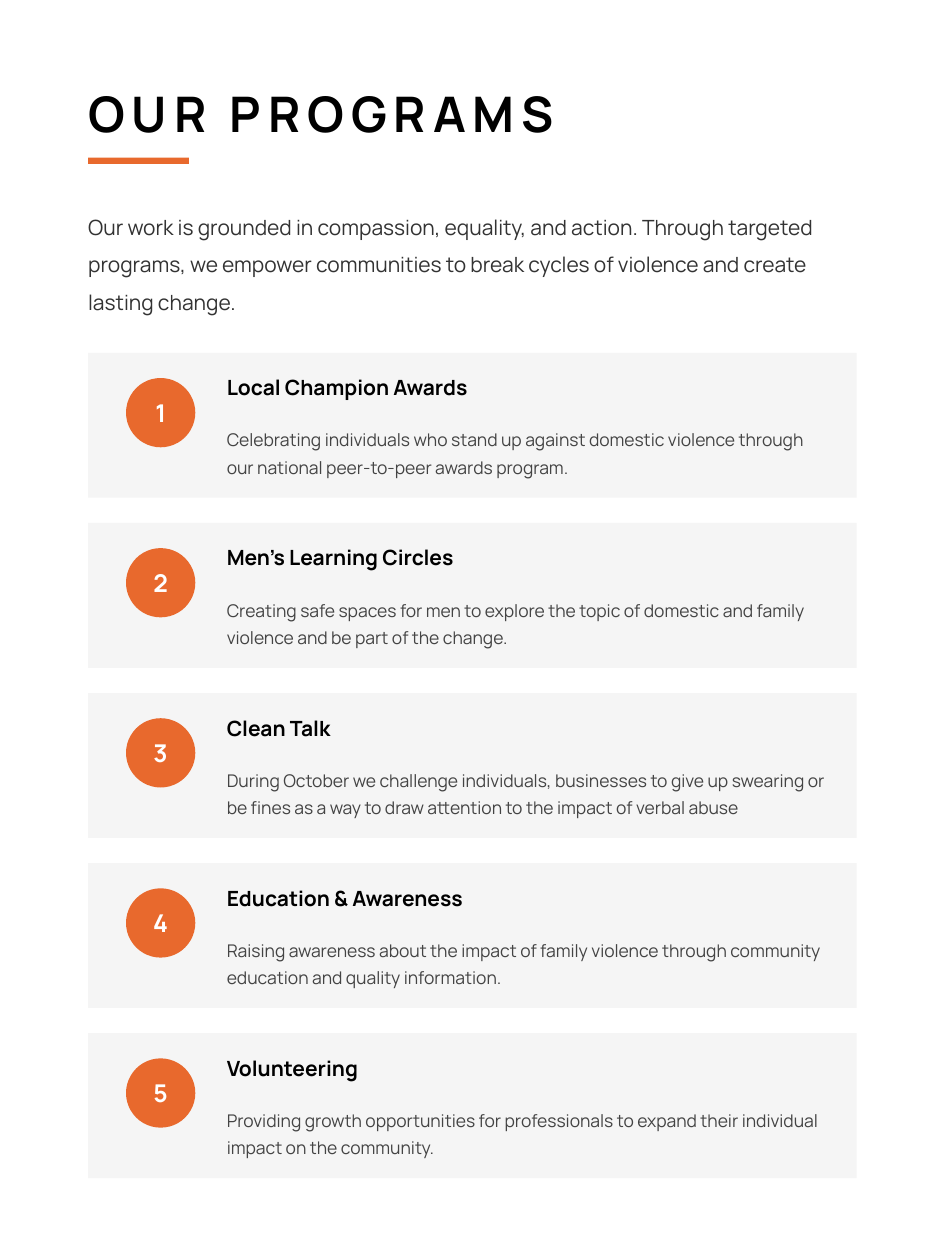
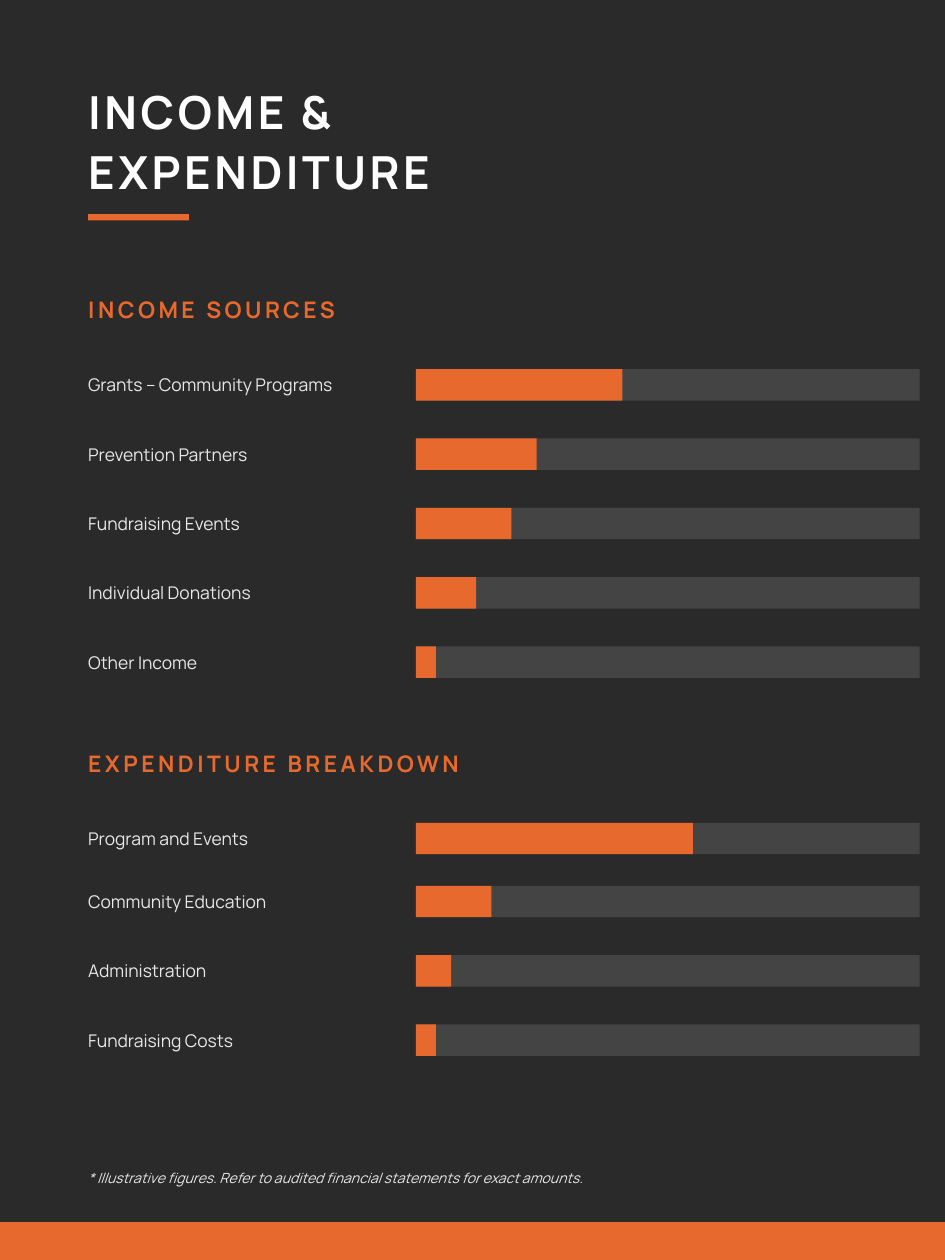
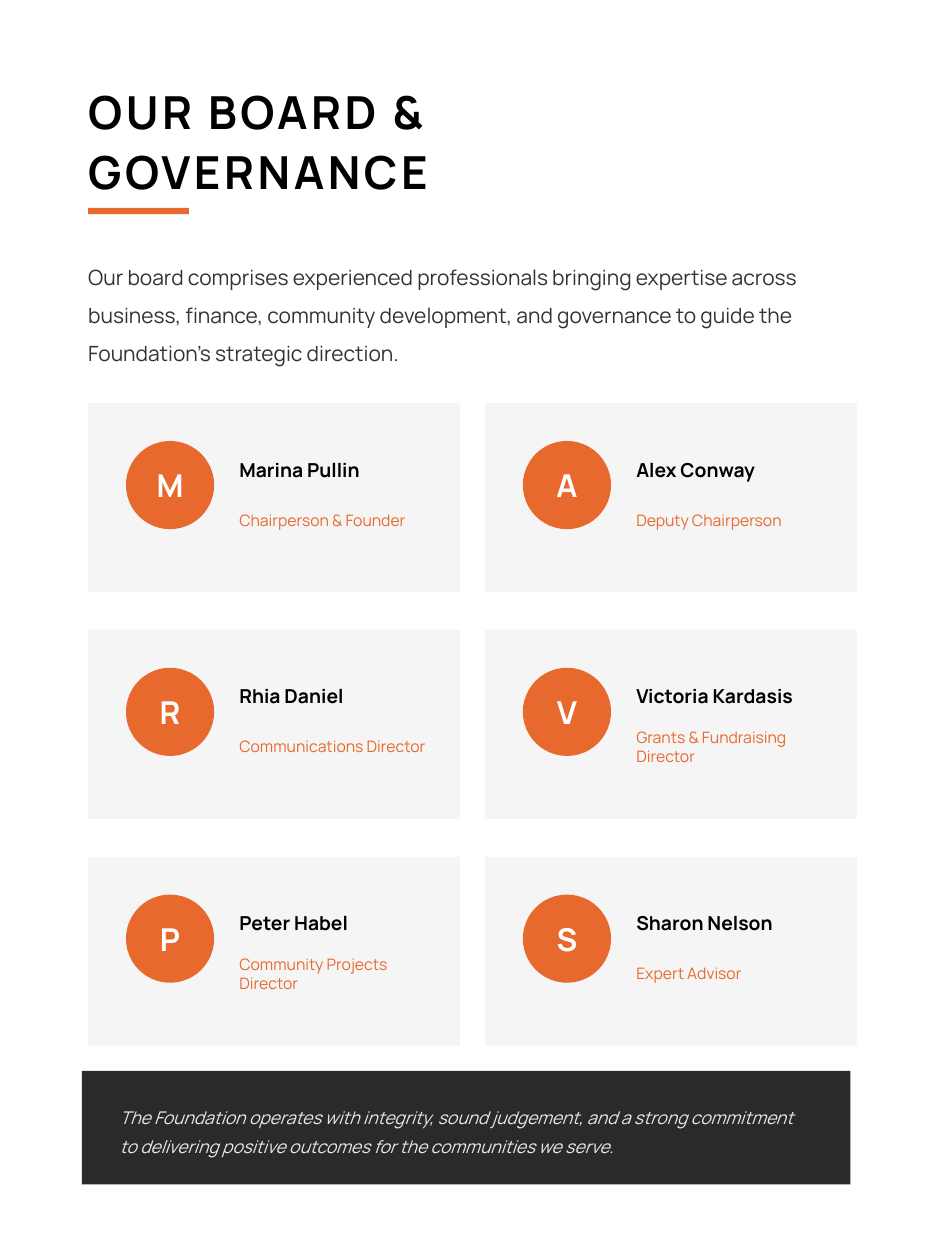
"""Build three report pages: programs, income and expenditure, board."""
from pptx import Presentation
from pptx.dml.color import RGBColor
from pptx.enum.shapes import MSO_SHAPE as Shape
from pptx.enum.text import MSO_ANCHOR as Anchor, MSO_AUTO_SIZE as AutoSize, PP_ALIGN as Align
from pptx.util import Inches, Pt

FONT = "Manrope"
LEFT = 0.7
CONTENT_WIDTH = 6.1
COLORS = {
    "orange": "E8692D", "dark": "2A2A2A", "white": "FFFFFF", "black": "000000",
    "card": "F5F5F5", "track": "444444", "intro": "333333", "body": "444444",
    "pale": "E8E8E8",
}
STYLES = {
    "wide_title": {"size": 28, "bold": True, "spacing": 4},
    "title": {"size": 26, "bold": True, "spacing": 2, "lines": 1.1},
    "intro": {"size": 12, "color": "intro", "lines": 1.5},
    "number": {"size": 14, "color": "white", "bold": True, "align": Align.CENTER},
    "program": {"size": 12, "color": "black", "bold": True},
    "detail": {"size": 10, "color": "body", "lines": 1.3},
    "section": {"size": 13, "color": "orange", "bold": True, "spacing": 2},
    "label": {"size": 10, "color": "pale"},
    "footnote": {"size": 8, "color": "pale", "italic": True},
    "initial": {"size": 18, "color": "white", "bold": True, "align": Align.CENTER},
    "member": {"size": 11, "color": "black", "bold": True},
    "role": {"size": 9, "color": "orange"},
    "statement": {"size": 10, "color": "pale", "italic": True, "lines": 1.4},
}
PROGRAMS = [
    ("Local Champion Awards", 4.8,
     "Celebrating individuals who stand up against domestic violence through "
     "our national peer-to-peer awards program."),
    ("Men’s Learning Circles", 4.8,
     "Creating safe spaces for men to explore the topic of domestic and family "
     "violence and be part of the change."),
    ("Clean Talk", 4.9,
     "During October we challenge individuals, businesses to give up swearing or "
     "be fines as a way to draw attention to the impact of verbal abuse"),
    ("Education & Awareness", 4.8,
     "Raising awareness about the impact of family violence through community "
     "education and quality information."),
    ("Volunteering", 4.8,
     "Providing growth opportunities for professionals to expand their individual "
     "impact on the community."),
]
INCOME = [
    ("Grants – Community Programs", 0.41),
    ("Prevention Partners", 0.24),
    ("Fundraising Events", 0.19),
    ("Individual Donations", 0.12),
    ("Other Income", 0.04),
]
EXPENDITURE = [
    ("Program and Events", 0.55),
    ("Community Education", 0.15),
    ("Administration", 0.07),
    ("Fundraising Costs", 0.04),
]
BOARD = [
    ("Marina Pullin", "Chairperson & Founder"),
    ("Alex Conway", "Deputy Chairperson"),
    ("Rhia Daniel", "Communications Director"),
    ("Victoria Kardasis", "Grants & Fundraising Director"),
    ("Peter Habel", "Community Projects Director"),
    ("Sharon Nelson", "Expert Advisor"),
]


def rgb(name):
    return RGBColor.from_string(COLORS[name])


def write(box, text, style, color=None):
    look = STYLES[style]
    frame = box.text_frame
    frame_values = {
        "margin_left": 0, "margin_top": 0, "margin_right": 0, "margin_bottom": 0,
        "word_wrap": True, "auto_size": AutoSize.NONE, "vertical_anchor": Anchor.MIDDLE,
    }
    for name, value in frame_values.items():
        setattr(frame, name, value)
    frame.text = text
    font_values = {
        "name": FONT, "size": Pt(look["size"]),
        "bold": look.get("bold", False), "italic": look.get("italic", False),
    }
    for para in frame.paragraphs:
        para.alignment = look.get("align", Align.LEFT)
        para.line_spacing = look.get("lines", 1.0)
        for span in para.runs:
            for name, value in font_values.items():
                setattr(span.font, name, value)
            span.font.color.rgb = rgb(color or look["color"])
            if "spacing" in look:
                span.font._element.set("spc", str(look["spacing"] * 100))


def add_text(page, left, top, width, height, text, style):
    box = page.shapes.add_textbox(*map(Inches, (left, top, width, height)))
    write(box, text, style)


def add_block(page, left, top, width, height, color, kind=Shape.RECTANGLE):
    block = page.shapes.add_shape(kind, *map(Inches, (left, top, width, height)))
    block.shadow.inherit = False
    block.fill.solid()
    block.fill.fore_color.rgb = rgb(color)
    block.line.fill.background()
    return block


def add_badge(page, left, top, size, text, style):
    badge = add_block(page, left, top, size, size, "orange", Shape.OVAL)
    write(badge, text, style)


def add_page(deck, title, style, height, rule_top, background="white", color="black"):
    page = deck.slides.add_slide(deck.slide_layouts[5])
    page.background.fill.solid()
    page.background.fill.fore_color.rgb = rgb(background)
    heading = page.shapes.title
    place = {"left": LEFT, "top": 0.6, "width": 6, "height": height}
    for name, value in place.items():
        setattr(heading, name, Inches(value))
    write(heading, title, style, color)
    add_block(page, LEFT, rule_top, 0.8, 0.05, "orange")
    return page


def add_program(page, top, number, name, width, detail):
    add_block(page, LEFT, top, CONTENT_WIDTH, 1.15, "card")
    add_badge(page, 1, top + 0.2, 0.55, str(number), "number")
    add_text(page, 1.8, top + 0.1, 4.8, 0.35, name, "program")
    add_text(page, 1.8, top + 0.5, width, 0.55, detail, "detail")


def add_bars(page, top, heading, rows, first_step):
    add_text(page, LEFT, top, 6, 0.35, heading, "section")
    row_top = top + 0.6
    for index, (label, share) in enumerate(rows):
        add_text(page, LEFT, row_top, 2.5, 0.35, label, "label")
        add_block(page, 3.3, row_top + 0.05, 4, 0.25, "track")
        add_block(page, 3.3, row_top + 0.05, 4 * share, 0.25, "orange")
        row_top += 0.55 if index else first_step


def add_member(page, left, top, name, role):
    add_block(page, left, top, 2.95, 1.5, "card")
    add_badge(page, left + 0.3, top + 0.3, 0.7, name[0], "initial")
    add_text(page, left + 1.2, top + 0.35, 1.5, 0.35, name, "member")
    add_text(page, left + 1.2, top + 0.75, 1.5, 0.35, role, "role")


def build_programs(deck):
    page = add_page(deck, "OUR PROGRAMS", "wide_title", 0.6, 1.25)
    add_text(page, LEFT, 1.6, CONTENT_WIDTH, 0.9,
             "Our work is grounded in compassion, equality, and action. Through targeted "
             "programs, we empower communities to break cycles of violence and create "
             "lasting change.", "intro")
    for index, program in enumerate(PROGRAMS):
        add_program(page, 2.8 + index * 1.35, index + 1, *program)


def build_finances(deck):
    page = add_page(deck, "INCOME &\nEXPENDITURE", "title", 1, 1.7, "dark", "white")
    add_bars(page, 2.28, "INCOME SOURCES", INCOME, 0.55)
    add_bars(page, 5.88, "EXPENDITURE BREAKDOWN", EXPENDITURE, 0.5)
    add_text(page, LEFT, 9.2, CONTENT_WIDTH, 0.3,
             "* Illustrative figures. Refer to audited financial statements for exact "
             "amounts.", "footnote")
    add_block(page, 0, 9.7, 7.5, 0.3, "orange")


def build_board(deck):
    page = add_page(deck, "OUR BOARD &\nGOVERNANCE", "title", 1, 1.65)
    add_text(page, LEFT, 2, CONTENT_WIDTH, 0.9,
             "Our board comprises experienced professionals bringing expertise across "
             "business, finance, community development, and governance to guide the "
             "Foundation’s strategic direction.", "intro")
    for index, (name, role) in enumerate(BOARD):
        row, column = divmod(index, 2)
        add_member(page, LEFT + column * 3.15, 3.2 + row * 1.8, name, role)
    add_block(page, 0.65, 8.5, CONTENT_WIDTH, 0.9, "dark")
    add_text(page, 0.95, 8.6, 5.5, 0.7,
             "The Foundation operates with integrity, sound judgement, and a strong "
             "commitment to delivering positive outcomes for the communities we serve.",
             "statement")


def main():
    deck = Presentation()
    deck.slide_width, deck.slide_height = Inches(7.5), Inches(10)
    build_programs(deck)
    build_finances(deck)
    build_board(deck)
    deck.save("out.pptx")


if __name__ == "__main__":
    main()
